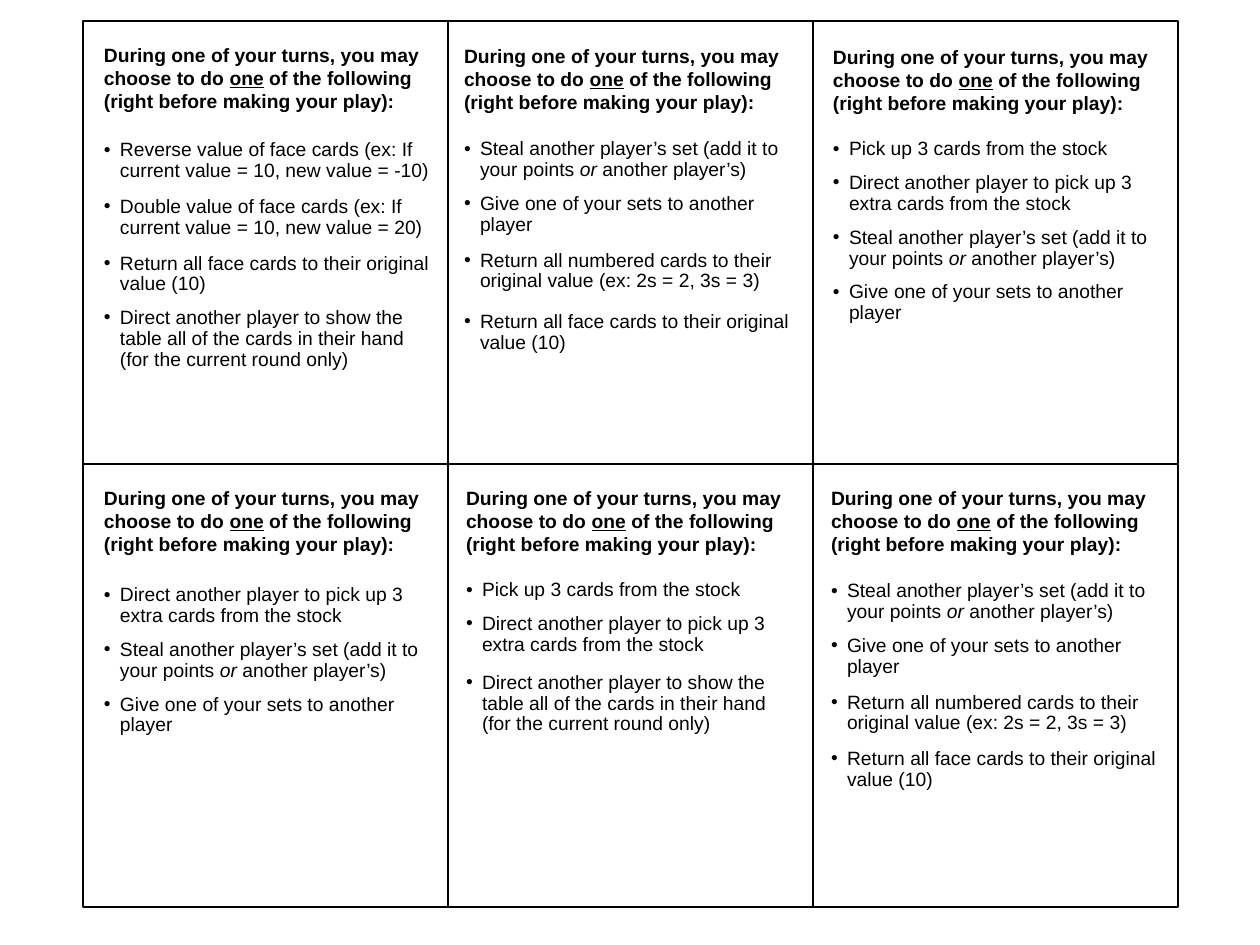
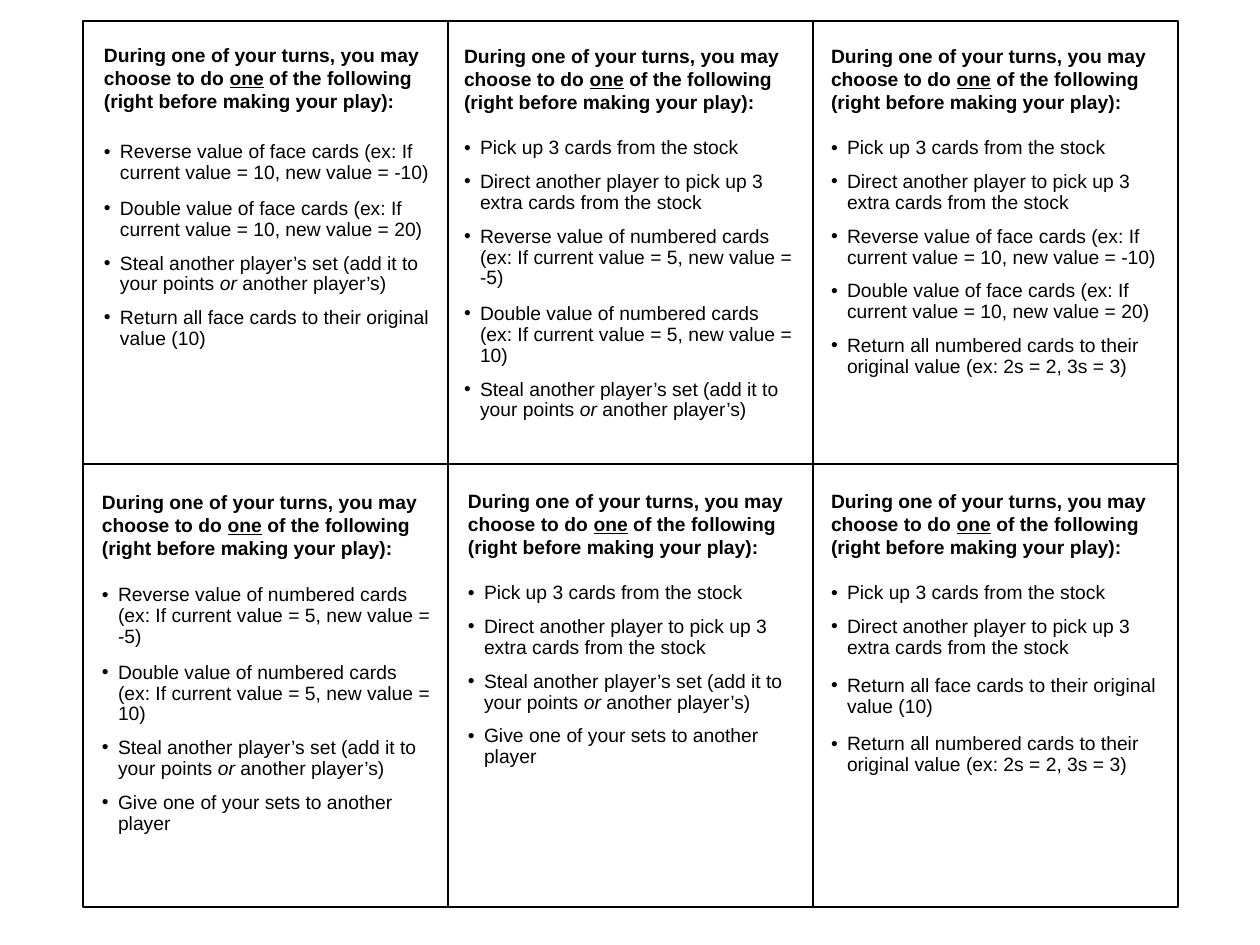
from dataclasses import dataclass

from lxml import etree
from pptx import Presentation
from pptx.dml.color import RGBColor
from pptx.enum.shapes import MSO_SHAPE
from pptx.enum.text import MSO_ANCHOR, PP_ALIGN
from pptx.oxml.ns import qn
from pptx.util import Emu, Inches, Pt

PX_PER_INCH = 126
BLACK = "000000"
FONT = "Arial"
COLUMNS = 3
GRID_LEFT, GRID_TOP = 83, 21
CARD_WIDTH, CARD_HEIGHT = 365, 443
TEXT_WIDTH, TEXT_HEIGHT = 357, 431
INSET_X, INSET_Y = 13, 6
BULLET_INDENT = 16

# Words between bars carry the accent: underline in the heading, italic in actions.
HEADING = ("During one of your turns, you may choose to do |one| of the "
           "following (right before making your play):")
PICK_UP = "Pick up 3 cards from the stock"
DIRECT_PICK_UP = "Direct another player to pick up 3 extra cards from the stock"
DIRECT_SHOW = ("Direct another player to show the table all of the cards in "
               "their hand (for the current round only)")
STEAL = "Steal another player’s set (add it to your points |or| another player’s)"
GIVE = "Give one of your sets to another player"
REVERSE_FACE = "Reverse value of face cards (ex: If current value = 10, new value = -10)"
DOUBLE_FACE = "Double value of face cards (ex: If current value = 10, new value = 20)"
REVERSE_NUMBERED = "Reverse value of numbered cards (ex: If current value = 5, new value = -5)"
DOUBLE_NUMBERED = "Double value of numbered cards (ex: If current value = 5, new value = 10)"
RETURN_FACE = "Return all face cards to their original value (10)"
RETURN_NUMBERED = "Return all numbered cards to their original value (ex: 2s = 2, 3s = 3)"


@dataclass
class Card:
    """Text offset inside the frame, and (space before, action) pairs, in px."""
    dx: int
    dy: int
    actions: list


FIRST_SHEET = [
    Card(8, 16, [(28, REVERSE_FACE), (15, DOUBLE_FACE), (15, RETURN_FACE), (13, DIRECT_SHOW)]),
    Card(3, 17, [(26, STEAL), (13, GIVE), (15, RETURN_NUMBERED), (20, RETURN_FACE)]),
    Card(7, 18, [(25, PICK_UP), (13, DIRECT_PICK_UP), (13, STEAL), (13, GIVE)]),
    Card(8, 16, [(30, DIRECT_PICK_UP), (13, STEAL), (13, GIVE)]),
    Card(5, 16, [(25, PICK_UP), (13, DIRECT_PICK_UP), (17, DIRECT_SHOW)]),
    Card(5, 16, [(26, STEAL), (13, GIVE), (15, RETURN_NUMBERED), (15, RETURN_FACE)]),
]
SECOND_SHEET = [
    Card(8, 16, [(30, REVERSE_FACE), (15, DOUBLE_FACE), (13, STEAL), (13, RETURN_FACE)]),
    Card(3, 17, [(25, PICK_UP), (13, DIRECT_PICK_UP), (13, REVERSE_NUMBERED),
                 (15, DOUBLE_NUMBERED), (13, STEAL)]),
    Card(5, 17, [(25, PICK_UP), (13, DIRECT_PICK_UP), (13, REVERSE_FACE),
                 (13, DOUBLE_FACE), (13, RETURN_NUMBERED)]),
    Card(6, 20, [(26, REVERSE_NUMBERED), (15, DOUBLE_NUMBERED), (13, STEAL), (13, GIVE)]),
    Card(7, 19, [(25, PICK_UP), (13, DIRECT_PICK_UP), (13, STEAL), (13, GIVE)]),
    Card(5, 19, [(25, PICK_UP), (13, DIRECT_PICK_UP), (17, RETURN_FACE), (17, RETURN_NUMBERED)]),
]


def px(length):
    return Emu(round(Inches(length) / PX_PER_INCH))


def color(hex_value):
    return RGBColor.from_string(hex_value)


def add_bullet(paragraph):
    properties = paragraph._p.get_or_add_pPr()
    properties.set("marL", str(px(BULLET_INDENT)))
    properties.set("indent", str(-px(BULLET_INDENT)))
    etree.SubElement(properties, qn("a:buFont"), typeface=FONT)
    etree.SubElement(properties, qn("a:buChar"), char="•")


def write(paragraph, text, accent, bold=False, size=11, fill=BLACK,
          space_before=None, line_spacing=None):
    """Fill a paragraph; accent names the font property of words between bars."""
    paragraph.alignment = PP_ALIGN.LEFT
    if space_before is not None:
        paragraph.space_before = px(space_before)
    if line_spacing is not None:
        paragraph.line_spacing = line_spacing
    for index, part in enumerate(text.split("|")):
        run = paragraph.add_run()
        run.text = part
        run.font.name = FONT
        run.font.size = Pt(size)
        run.font.bold = bold
        run.font.color.rgb = color(fill)
        if index % 2:
            setattr(run.font, accent, True)


def add_frame(slide, left, top):
    frame = slide.shapes.add_shape(MSO_SHAPE.RECTANGLE, px(left), px(top),
                                   px(CARD_WIDTH), px(CARD_HEIGHT))
    frame.shadow.inherit = False
    frame.fill.background()
    frame.line.color.rgb = color(BLACK)
    frame.line.width = Pt(0.75)


def add_card_text(slide, left, top, card):
    box = slide.shapes.add_textbox(px(left + card.dx), px(top + card.dy),
                                   px(TEXT_WIDTH), px(TEXT_HEIGHT))
    body = box.text_frame
    body.word_wrap = True
    body.vertical_anchor = MSO_ANCHOR.TOP
    body.margin_left = body.margin_right = px(INSET_X)
    body.margin_top = body.margin_bottom = px(INSET_Y)
    write(body.paragraphs[0], HEADING, "underline", bold=True)
    for gap, action in card.actions:
        item = body.add_paragraph()
        add_bullet(item)
        write(item, action, "italic", space_before=gap, line_spacing=0.9)


def add_sheet(presentation, cards):
    slide = presentation.slides.add_slide(presentation.slide_layouts[6])
    corners = [(GRID_LEFT + index % COLUMNS * CARD_WIDTH,
                GRID_TOP + index // COLUMNS * CARD_HEIGHT)
               for index in range(len(cards))]
    for left, top in corners:
        add_frame(slide, left, top)
    for (left, top), card in zip(corners, cards):
        add_card_text(slide, left, top, card)


def main():
    presentation = Presentation()
    presentation.slide_width = Inches(10)
    presentation.slide_height = Inches(7.5)
    for cards in (FIRST_SHEET, SECOND_SHEET):
        add_sheet(presentation, cards)
    presentation.save("out.pptx")


if __name__ == "__main__":
    main()
